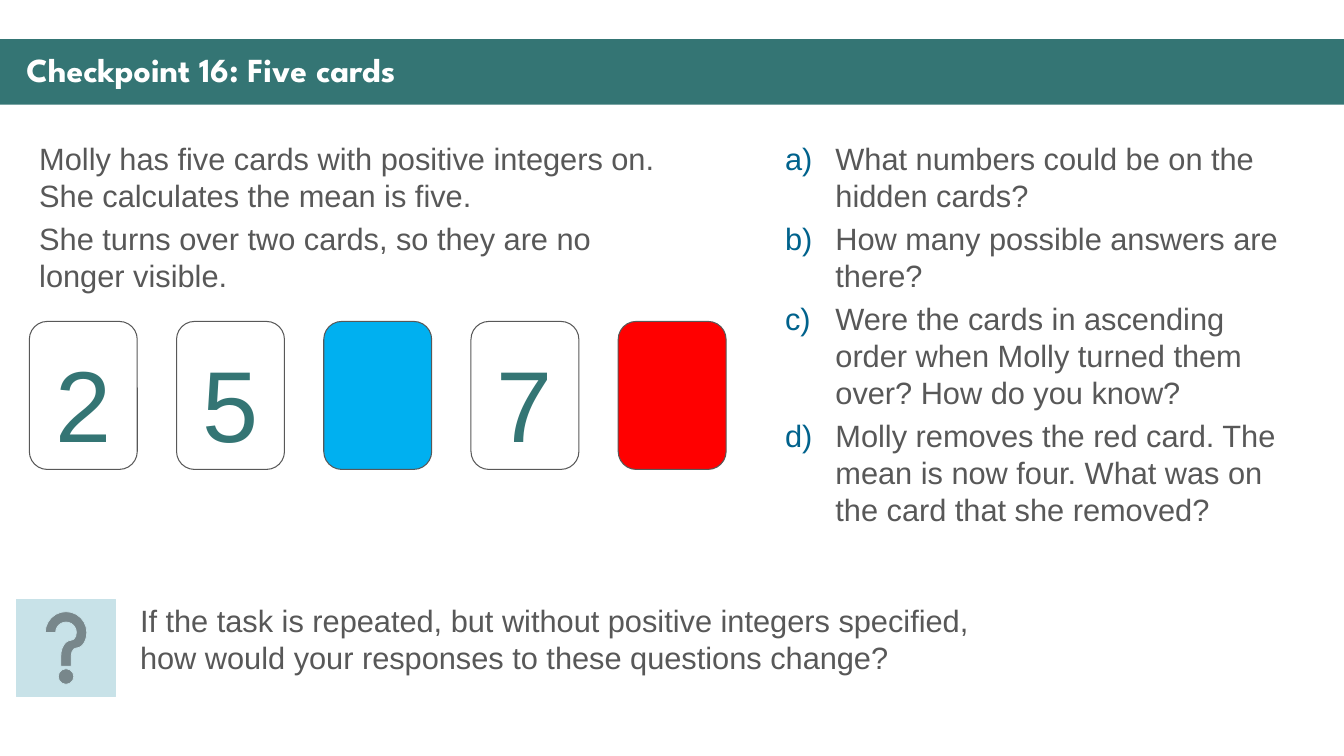
from dataclasses import dataclass
from typing import Optional

from lxml.etree import SubElement
from pptx import Presentation
from pptx.dml.color import RGBColor
from pptx.enum.shapes import MSO_SHAPE
from pptx.enum.text import MSO_ANCHOR, MSO_AUTO_SIZE, PP_ALIGN
from pptx.oxml.ns import qn
from pptx.util import Cm, Pt

TEAL = RGBColor(0x34, 0x75, 0x74)
WHITE = RGBColor(0xFF, 0xFF, 0xFF)
GREY = RGBColor(0x58, 0x58, 0x58)
PALE_BLUE = RGBColor(0xC8, 0xE2, 0xE8)
SKY_BLUE = RGBColor(0x00, 0xB0, 0xF0)
RED = RGBColor(0xFF, 0x00, 0x00)
LETTER_BLUE = RGBColor(0x00, 0x62, 0x8C)

CARD_LEFT, CARD_TOP, CARD_PITCH = 0.74, 8.1, 3.71
CARD_WIDTH, CARD_HEIGHT, DIGIT_DROP = 2.72, 3.73, 0.18
BODY_LINE = Pt(26.4)


@dataclass(frozen=True)
class Area:
    left: float
    top: float
    width: float
    height: float

    def lengths(self) -> tuple:
        return Cm(self.left), Cm(self.top), Cm(self.width), Cm(self.height)


@dataclass(frozen=True)
class Card:
    digit: str = ""
    fill: Optional[RGBColor] = None


CARDS = [Card("2"), Card("5"), Card(fill=SKY_BLUE), Card("7"), Card(fill=RED)]

STORY = [
    "Molly has five cards with positive integers on. She calculates the mean is five.",
    "She turns over two cards, so they are no longer visible.",
]
TASKS = [
    "What numbers could be on the hidden cards?",
    "How many possible answers are there?",
    "Were the cards in ascending order when Molly turned them over? How do you know?",
    "Molly removes the red card. The mean is now four. What was on the card that she removed?",
]
EXTENSION = [
    "If the task is repeated, but without positive integers specified, "
    "how would your responses to these questions change?"
]


def place(box, area: Area) -> None:
    box.left, box.top, box.width, box.height = area.lengths()


def letter(para) -> None:
    properties = para._p.get_or_add_pPr()
    properties.set("marL", str(Cm(1.27)))
    properties.set("indent", str(-Cm(1.27)))
    colour = SubElement(properties, qn("a:buClr"))
    SubElement(colour, qn("a:srgbClr"), val=str(LETTER_BLUE))
    SubElement(properties, qn("a:buFont"), typeface="Arial")
    SubElement(properties, qn("a:buAutoNum"), type="alphaLcParenR")


def write(box, texts: list, *, size: float = 22, colour: RGBColor = GREY,
          font: str = "Arial", bold: bool = False, align=PP_ALIGN.LEFT,
          anchor=MSO_ANCHOR.TOP, line_spacing=BODY_LINE, lettered: bool = False) -> None:
    frame = box.text_frame
    frame.word_wrap = True
    frame.auto_size = MSO_AUTO_SIZE.NONE
    frame.vertical_anchor = anchor
    for index, text in enumerate(texts):
        para = frame.add_paragraph() if index else frame.paragraphs[0]
        para.alignment = align
        para.line_spacing = line_spacing
        para.space_before = Pt(4.4 if index else 0)
        if lettered:
            letter(para)
        span = para.add_run()
        span.text = text
        span.font.size = Pt(size)
        span.font.name = font
        span.font.bold = bold
        span.font.color.rgb = colour


def draw_shape(shapes, kind, area: Area, *, fill: Optional[RGBColor] = None,
               line: Optional[RGBColor] = None, weight: float = 0.75):
    shape = shapes.add_shape(kind, *area.lengths())
    shape.shadow.inherit = False
    if fill is None:
        shape.fill.background()
    else:
        shape.fill.solid()
        shape.fill.fore_color.rgb = fill
    if line is None:
        shape.line.fill.background()
    else:
        shape.line.color.rgb = line
        shape.line.width = Pt(weight)
    return shape


def draw_card(page, index: int, card: Card) -> None:
    left = CARD_LEFT + index * CARD_PITCH
    group = page.shapes.add_group_shape()
    draw_shape(group.shapes, MSO_SHAPE.ROUNDED_RECTANGLE,
               Area(left, CARD_TOP, CARD_WIDTH, CARD_HEIGHT), fill=card.fill, line=GREY)
    if card.digit:
        area = Area(left, CARD_TOP + DIGIT_DROP, CARD_WIDTH, CARD_HEIGHT)
        box = group.shapes.add_textbox(*area.lengths())
        write(box, [card.digit], size=72, colour=TEAL, align=PP_ALIGN.CENTER,
              anchor=MSO_ANCHOR.MIDDLE, line_spacing=1.0)


def main() -> None:
    deck = Presentation()
    deck.slide_width, deck.slide_height = Cm(33.87), Cm(19.05)
    page = deck.slides.add_slide(deck.slide_layouts[1])

    title = page.shapes.title
    band = draw_shape(page.shapes, MSO_SHAPE.RECTANGLE, Area(0, 0.99, 33.87, 1.65), fill=TEAL)
    title.element.addprevious(band.element)
    place(title, Area(0.41, 1.22, 33.12, 1.19))
    write(title, ["Checkpoint 16: Five cards"], size=24, colour=WHITE, bold=True,
          font="League Spartan", anchor=MSO_ANCHOR.MIDDLE, line_spacing=0.9)

    tasks = page.placeholders[1]
    place(tasks, Area(19.53, 3.4, 13.16, 10.24))
    write(tasks, TASKS, lettered=True)

    story = page.shapes.add_textbox(*Area(0.74, 3.4, 16.21, 4.22).lengths())
    write(story, STORY)

    draw_shape(page.shapes, MSO_SHAPE.ACTION_BUTTON_HELP, Area(0.41, 15.11, 2.51, 2.44),
               fill=PALE_BLUE, line=PALE_BLUE, weight=0.5)
    extension = page.shapes.add_textbox(*Area(3.28, 15.04, 22.66, 2.13).lengths())
    write(extension, EXTENSION)

    for index, card in enumerate(CARDS):
        draw_card(page, index, card)

    deck.save("out.pptx")


if __name__ == "__main__":
    main()
